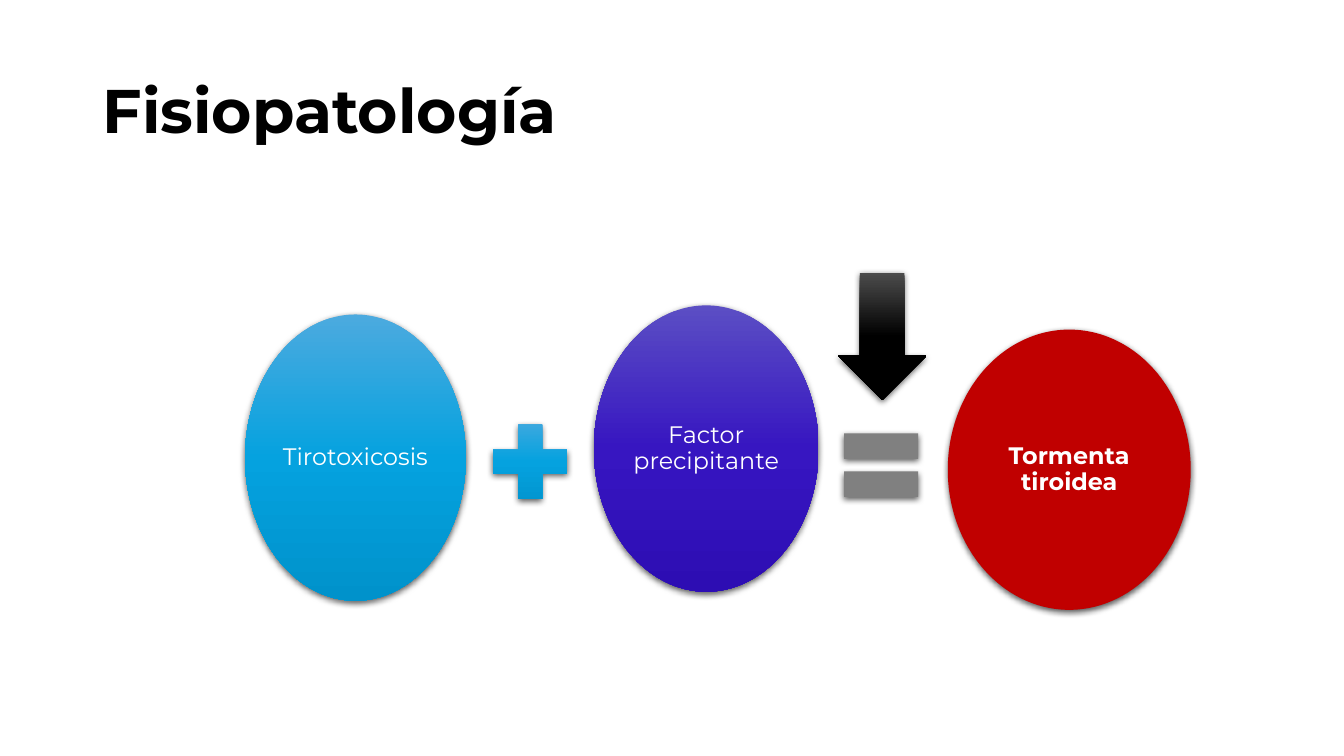
from dataclasses import dataclass

from pptx import Presentation
from pptx.dml.color import RGBColor
from pptx.enum.shapes import MSO_SHAPE
from pptx.enum.text import MSO_ANCHOR, PP_ALIGN
from pptx.oxml import parse_xml
from pptx.oxml.ns import nsdecls, qn
from pptx.util import Emu, Pt


@dataclass(frozen=True)
class Theme:
    """Colours, font and type sizes of the slide."""
    font: str = "Montserrat"
    title: int = 44
    label: int = 17
    ink: str = "000000"
    paper: str = "FFFFFF"
    blue: tuple = ("4CAADF", "05A2DF", "0092CB")
    violet: tuple = ("5B4EC4", "3716C1", "2D0DB3")
    black: tuple = ("4B4B4B", "000000", "000000")
    gray: tuple = ("808080",)
    red: tuple = ("C00000",)


class Board:
    """Draws styled elements on the current slide."""

    def __init__(self, deck, theme, scale=9144):
        """Set the slide size and add a blank slide."""
        self.theme = theme
        self.scale = scale
        deck.slide_width, deck.slide_height = self.emu(1333, 750)
        self.slide = deck.slides.add_slide(deck.slide_layouts[6])

    def emu(self, *sizes):
        """Turn px into EMU."""
        return [Emu(size * self.scale) for size in sizes]

    def paint(self, shape, tones):
        """Fill with one tone or a downward gradient."""
        if len(tones) == 1:
            shape.fill.solid()
            shape.fill.fore_color.rgb = RGBColor.from_string(tones[0])
            return
        stops = "".join(
            f'<a:gs pos="{i * 50000}"><a:srgbClr val="{tone}"/></a:gs>'
            for i, tone in enumerate(tones))
        shape._element.spPr.find(qn("a:prstGeom")).addnext(parse_xml(
            f'<a:gradFill {nsdecls("a")} rotWithShape="1"><a:gsLst>{stops}'
            '</a:gsLst><a:lin ang="5400000" scaled="0"/></a:gradFill>'))

    def shade(self, shape):
        """Give the shape a soft shadow below."""
        shape.shadow.inherit = False
        shape._element.spPr.find(qn("a:effectLst")).append(parse_xml(
            f'<a:outerShdw {nsdecls("a")} blurRad="57150" dist="19050" '
            'dir="5400000" algn="ctr" rotWithShape="0">'
            '<a:srgbClr val="000000"><a:alpha val="63000"/></a:srgbClr>'
            '</a:outerShdw>'))

    def shape(self, kind, box, tones):
        """Add a shaded preset shape without outline."""
        shape = self.slide.shapes.add_shape(kind, *self.emu(*box))
        self.paint(shape, tones)
        shape.line.fill.background()
        self.shade(shape)
        return shape

    def text(self, frame, words, size, color, bold):
        """Put one run into a text frame."""
        frame.word_wrap = True
        frame.vertical_anchor = MSO_ANCHOR.MIDDLE
        line = frame.paragraphs[0]
        line.line_spacing = 0.9
        run = line.add_run()
        run.text = words
        font = run.font
        font.name, font.size, font.bold = self.theme.font, Pt(size), bold
        font.color.rgb = RGBColor.from_string(color)
        return line

    def oval(self, box, tones, words, bold=False):
        """Add an ellipse with a centred label."""
        frame = self.shape(MSO_SHAPE.OVAL, box, tones).text_frame
        inset, = self.emu(2)
        frame.margin_left = frame.margin_right = inset
        frame.margin_top = frame.margin_bottom = inset
        line = self.text(frame, words, self.theme.label, self.theme.paper, bold)
        line.alignment = PP_ALIGN.CENTER
        line.space_after = Pt(6)

    def title(self, box, words):
        """Add the slide title."""
        frame = self.slide.shapes.add_textbox(*self.emu(*box)).text_frame
        line = self.text(frame, words, self.theme.title, self.theme.ink, True)
        line.alignment = PP_ALIGN.LEFT


def main():
    """Build and save the slide."""
    deck = Presentation()
    theme = Theme()
    board = Board(deck, theme)
    board.oval((243, 312, 219, 284), theme.blue, "Tirotoxicosis")
    board.shape(MSO_SHAPE.MATH_PLUS, (476, 408, 100, 100), theme.blue)
    board.oval((589, 303, 223, 284), theme.violet, "Factor precipitante")
    board.shape(MSO_SHAPE.MATH_EQUAL, (824, 408, 100, 107), theme.gray)
    board.oval((940, 327, 241, 278), theme.red, "Tormenta tiroidea", True)
    board.title((92, 40, 1150, 145), "Fisiopatología")
    board.shape(MSO_SHAPE.DOWN_ARROW, (831, 271, 88, 126), theme.black)
    deck.save("out.pptx")


if __name__ == "__main__":
    main()
